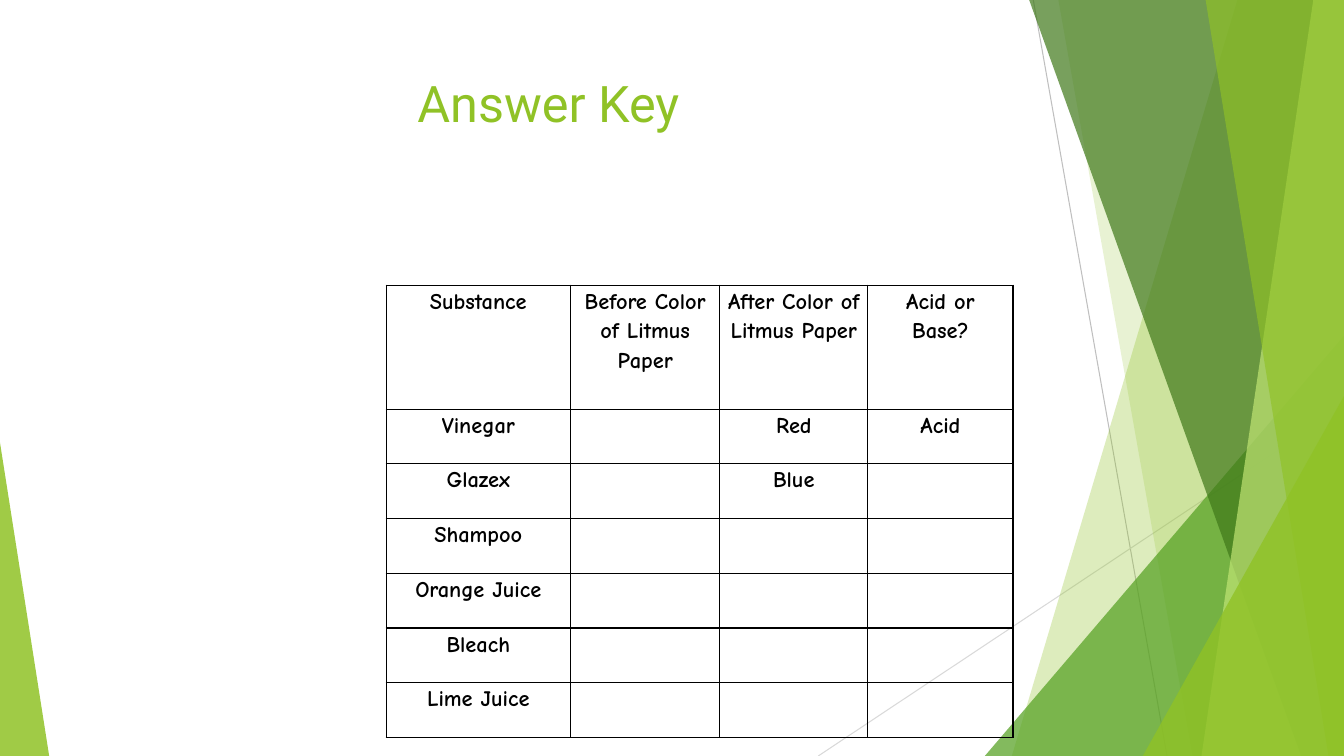
from lxml.etree import SubElement
from pptx import Presentation
from pptx.dml.color import RGBColor
from pptx.enum.shapes import MSO_CONNECTOR, MSO_SHAPE
from pptx.enum.text import MSO_ANCHOR, PP_ALIGN
from pptx.oxml.ns import qn
from pptx.util import Cm, Pt

W, H = 33.87, 19.05


def rgb(value):
    return RGBColor.from_string(value)


def write(p, text, size, font, color, bold=False):
    p.alignment = PP_ALIGN.CENTER
    r = p.add_run()
    r.text = text
    r.font.color.rgb = rgb(color)
    style = {"size": Pt(size), "name": font, "bold": bold}
    for key, value in style.items():
        setattr(r.font, key, value)


prs = Presentation()
prs.slide_width, prs.slide_height = Cm(W), Cm(H)
s = prs.slides.add_slide(prs.slide_layouts[6])

# Thin lines behind the facets
for x1, y1, x2, y2, color in [
    (26.04, 0, 29.41, H, "BFBFBF"),
    (W, 10.24, 20.62, H, "D9D9D9"),
]:
    line = s.shapes.add_connector(MSO_CONNECTOR.STRAIGHT, Cm(x1), Cm(y1), Cm(x2), Cm(y2))
    line.line.color.rgb = rgb(color)
    line.line.width = Pt(0.75)
    SubElement(line._element.spPr, qn("a:effectLst"))

# Facets: (top x, bottom x) reach the right edge,
# (left, top, width, height, apex) are triangles
facets = [
    ((31.19, 25.5), "90C226", 30),
    ((26.67, 30.05), "90C226", 20),
    ((24.82, 8.46, 9.05, 10.59, 1), "54A021", 72),
    ((25.93, 32.79), "3F7819", 70),
    ((33.1, 30.28), "C0E474", 70),
    ((30.38, 33.48), "90C226", 65),
    ((28.8, 9.98, 5.07, 9.07, 1), "90C226", 80),
    ((0, 11.15, 1.24, 7.9, 0), "90C226", 85),
]
for outline, color, opacity in facets:
    if len(outline) == 2:
        top_x, bottom_x = outline
        builder = s.shapes.build_freeform(Cm(top_x), Cm(-0.02))
        corners = [(W, -0.02), (W, H), (bottom_x, H)]
        builder.add_line_segments([(Cm(x), Cm(y)) for x, y in corners], close=True)
        sp = builder.convert_to_shape()
    else:
        *box, apex = outline
        sp = s.shapes.add_shape(MSO_SHAPE.ISOSCELES_TRIANGLE, *map(Cm, box))
        sp.adjustments[0] = apex
    sp.shadow.inherit = False
    sp.line.fill.background()
    sp.fill.solid()
    sp.fill.fore_color.rgb = rgb(color)
    clr = sp._element.spPr.find(qn("a:solidFill"))[0]
    SubElement(clr, qn("a:alpha"), val=str(opacity * 1000))

# Title
tf = s.shapes.add_textbox(Cm(1.88), Cm(1.7), Cm(23.88), Cm(3.66)).text_frame
tf.word_wrap = True
tf.vertical_anchor = MSO_ANCHOR.TOP
write(tf.paragraphs[0], "Answer Key", 36, "Roboto", "90C226")

# Answer table
answers = [
    ["Substance", "Before Color of Litmus Paper", "After Color of Litmus Paper", "Acid or Base?"],
    ["Vinegar", "", "Red", "Acid"],
    ["Glazex", "", "Blue", ""],
    ["Shampoo", "", "", ""],
    ["Orange Juice", "", "", ""],
    ["Bleach", "", "", ""],
    ["Lime Juice", "", "", ""],
]
widths = [4.65, 3.76, 3.73, 3.66]
heights = [3.12] + [1.38] * 6
table = s.shapes.add_table(len(answers), len(widths), Cm(9.73), Cm(7.19),
                           Cm(sum(widths)), Cm(sum(heights))).table
table.first_row = table.horz_banding = False
for column, width in zip(table.columns, widths):
    column.width = Cm(width)
for row, height, texts in zip(table.rows, heights, answers):
    row.height = Cm(height)
    for cell, text in zip(row.cells, texts):
        margins = {"margin_left": 0.18, "margin_right": 0.18, "margin_top": 0, "margin_bottom": 0}
        for key, value in margins.items():
            setattr(cell, key, Cm(value))
        tcPr = cell._tc.get_or_add_tcPr()
        for side in ("lnL", "lnR", "lnT", "lnB"):
            ln = SubElement(tcPr, qn("a:" + side), w=str(Pt(1)))
            SubElement(SubElement(ln, qn("a:solidFill")), qn("a:srgbClr"), val="000000")
        cell.fill.background()
        if text:
            p = cell.text_frame.paragraphs[0]
            p.line_spacing = 1.15
            write(p, text, 16, "Comic Neue", "000000", bold=True)

prs.save("out.pptx")
